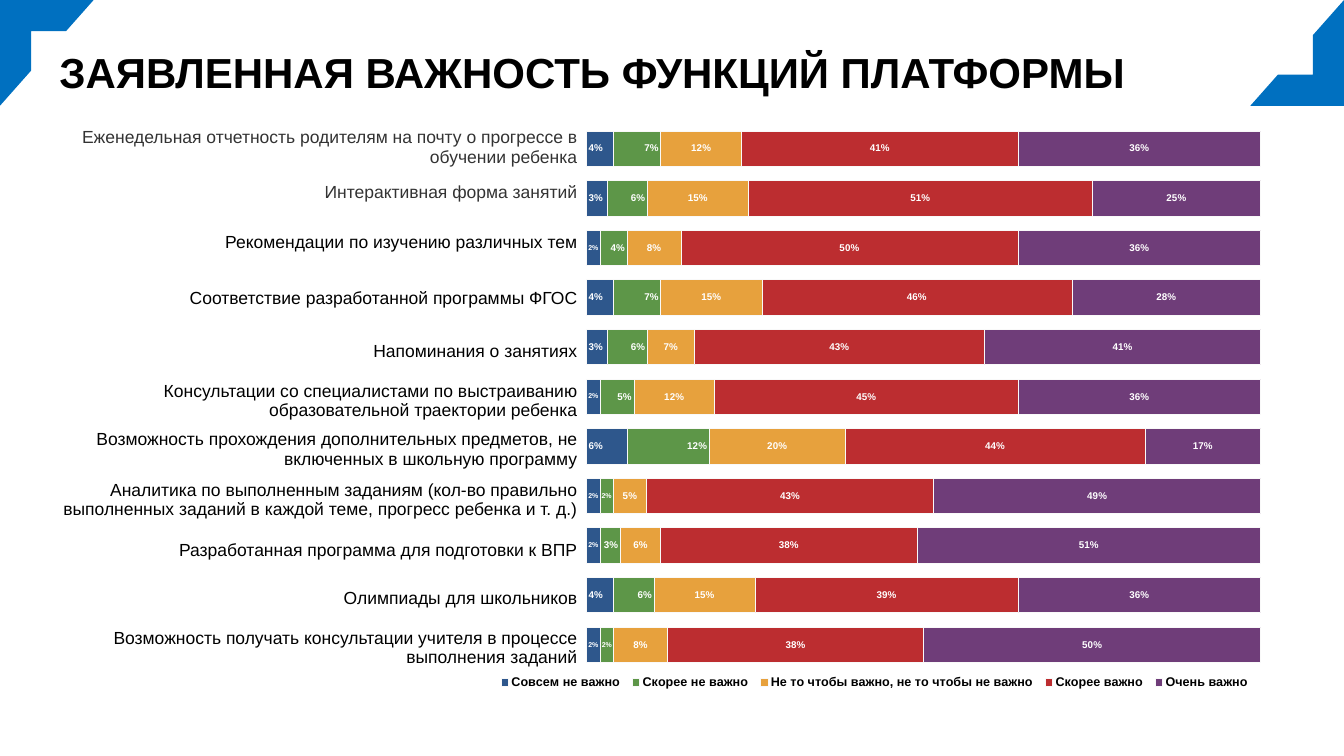
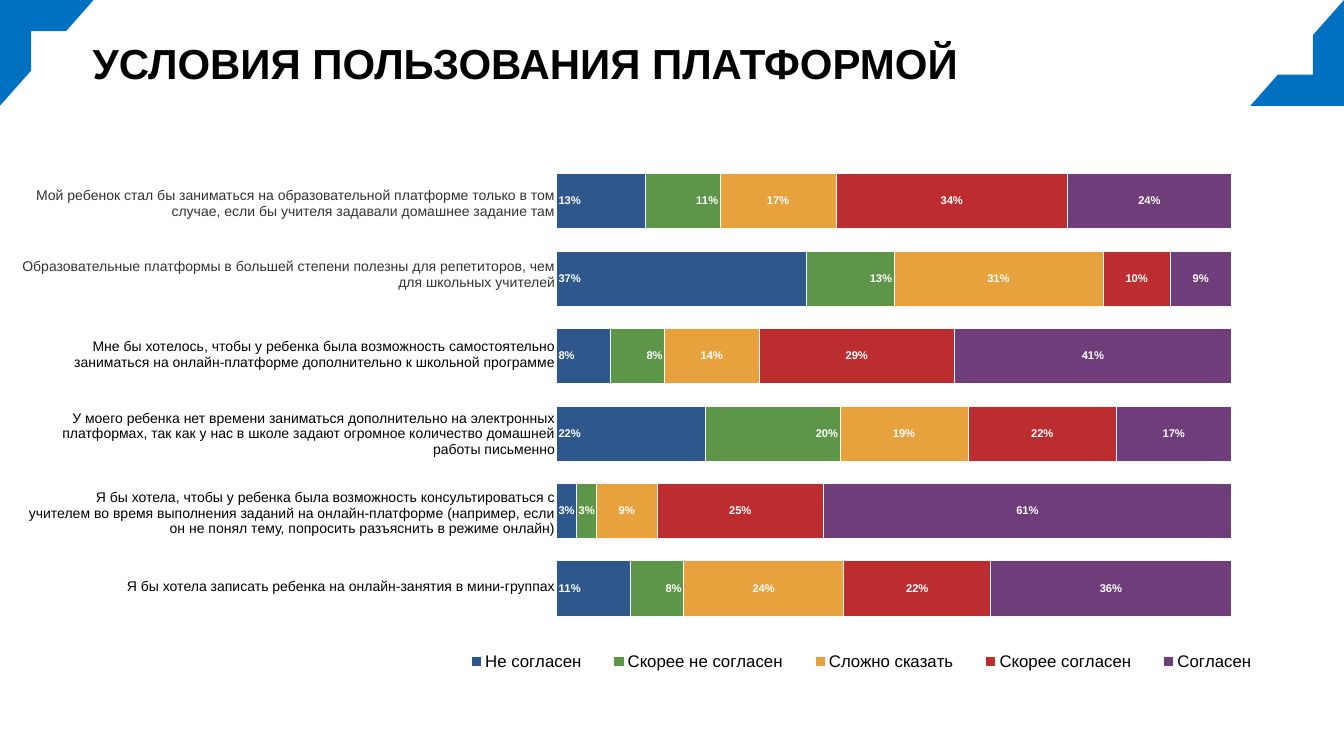
from dataclasses import dataclass

from lxml.etree import SubElement
from pptx import Presentation
from pptx.chart.data import CategoryChartData
from pptx.dml.color import RGBColor
from pptx.enum.chart import (XL_CHART_TYPE, XL_LABEL_POSITION, XL_LEGEND_POSITION,
                             XL_TICK_LABEL_POSITION, XL_TICK_MARK)
from pptx.enum.shapes import MSO_SHAPE
from pptx.enum.text import MSO_ANCHOR, PP_ALIGN
from pptx.oxml.ns import qn
from pptx.util import Cm, Pt


@dataclass(frozen=True)
class Theme:
    font: str = "Arial"
    accent: str = "0070C0"
    text: str = "000000"
    soft_text: str = "333333"
    light: str = "FFFFFF"
    bar_edge: str = "F9F9F9"
    answers: tuple = ("2E578C", "5D9648", "E7A13D", "BC2D30", "6F3D79")
    title_size: int = 60
    narrow_value_size: int = 10


THEME = Theme()
SLIDE_SIZE = (67.73, 38.1)
CORNER_SIZE = (4.72, 5.33)
TITLE_SIZE = (58.34, 6.35)
NARROW_SHARE = 0.02
LABEL_POSITIONS = (XL_LABEL_POSITION.INSIDE_BASE, XL_LABEL_POSITION.INSIDE_END,
                   *[XL_LABEL_POSITION.CENTER] * 3)

SURVEYS = [
    {
        "title": "ЗАЯВЛЕННАЯ ВАЖНОСТЬ ФУНКЦИЙ ПЛАТФОРМЫ",
        "title_at": (2.84, -0.58),
        "title_spacing": Pt(130),
        "table": (1.83, 6.4, 27.25),
        "chart": (21.92, 5.44, 48.67, 29.54),
        "plot": (0.157, 0.027, 0.698, 0.931),
        "legend": (0.06, 0.96, 0.79, 0.04),
        "legend_bold": True,
        "sizes": {"question": 25, "value": 14, "legend": 18},
        "answers": ["Совсем не важно", "Скорее не важно",
                    "Не то чтобы важно, не то чтобы не важно",
                    "Скорее важно", "Очень важно"],
        "questions": [
            ("Еженедельная отчетность родителям на почту о прогрессе в обучении ребенка",
             2.08, (0.04, 0.07, 0.12, 0.41, 0.36)),
            ("Интерактивная форма занятий", 2.44, (0.03, 0.06, 0.15, 0.51, 0.25)),
            ("Рекомендации по изучению различных тем",
             2.62, (0.02, 0.04, 0.08, 0.5, 0.36)),
            ("Соответствие разработанной программы ФГОС",
             2.97, (0.04, 0.07, 0.15, 0.46, 0.28)),
            ("Напоминания о занятиях", 2.44, (0.03, 0.06, 0.07, 0.43, 0.41)),
            ("Консультации со специалистами по выстраиванию образовательной "
             "траектории ребенка", 2.49, (0.02, 0.05, 0.12, 0.45, 0.36)),
            ("Возможность прохождения дополнительных предметов, не включенных "
             "в школьную программу", 2.44, (0.06, 0.12, 0.2, 0.44, 0.17)),
            ("Аналитика по выполненным заданиям (кол-во правильно выполненных заданий "
             "в каждой теме, прогресс ребенка и т. д.)",
             2.62, (0.02, 0.02, 0.05, 0.43, 0.49)),
            ("Разработанная программа для подготовки к ВПР",
             2.44, (0.02, 0.03, 0.06, 0.38, 0.51)),
            ("Олимпиады для школьников", 2.49, (0.04, 0.06, 0.15, 0.39, 0.36)),
            ("Возможность получать консультации учителя в процессе выполнения заданий",
             2.44, (0.02, 0.02, 0.08, 0.38, 0.5)),
        ],
    },
    {
        "title": "УСЛОВИЯ ПОЛЬЗОВАНИЯ ПЛАТФОРМОЙ",
        "title_at": (4.52, 0),
        "title_spacing": 1.0,
        "table": (0.94, 8.64, 27.03),
        "chart": (22.4, 7.16, 46.69, 26.87),
        "plot": (0.121, 0.038, 0.728, 0.872),
        "legend": (0, 0.95, 0.9, 0.05),
        "legend_bold": False,
        "sizes": {"question": 20, "value": 16, "legend": 24},
        "answers": ["Не согласен", "Скорее не согласен", "Сложно сказать",
                    "Скорее согласен", "Согласен"],
        "questions": [
            ("Мой ребенок стал бы заниматься на образовательной платформе только в том "
             "случае, если бы учителя задавали домашнее задание там",
             3.23, (0.13, 0.11, 0.17, 0.34, 0.24)),
            ("Образовательные платформы в большей степени полезны для репетиторов, "
             "чем для школьных учителей", 3.96, (0.37, 0.13, 0.31, 0.1, 0.09)),
            ("Мне бы хотелось, чтобы у ребенка была возможность самостоятельно "
             "заниматься на онлайн-платформе дополнительно к школьной программе",
             4.11, (0.08, 0.08, 0.14, 0.29, 0.41)),
            ("У моего ребенка нет времени заниматься дополнительно на электронных "
             "платформах, так как у нас в школе задают огромное количество домашней "
             "работы письменно", 3.84, (0.22, 0.2, 0.19, 0.22, 0.17)),
            ("Я бы хотела, чтобы у ребенка была возможность консультироваться с учителем "
             "во время выполнения заданий на онлайн-платформе (например, если он не понял "
             "тему, попросить разъяснить в режиме онлайн)",
             4.19, (0.03, 0.03, 0.09, 0.25, 0.61)),
            ("Я бы хотела записать ребенка на онлайн-занятия в мини-группах",
             3.15, (0.11, 0.08, 0.24, 0.22, 0.36)),
        ],
    },
]


def centimetres(values):
    """Turn plain numbers into lengths."""
    return [Cm(value) for value in values]


def style_font(font, size, color, bold=False):
    """Apply the theme font with a size, colour and weight."""
    font.name = THEME.font
    font.size = Pt(size)
    font.bold = bold
    font.color.rgb = RGBColor.from_string(color)


def add_corners(slide, layout):
    """Place the two corner frames on the layout behind its placeholders."""
    width, height = CORNER_SIZE
    for index, (left, rotation) in enumerate(((0, 0), (SLIDE_SIZE[0] - width, 180))):
        corner = slide.shapes.add_shape(MSO_SHAPE.HALF_FRAME,
                                        *centimetres((left, 0, width, height)))
        corner.rotation = rotation
        corner.shadow.inherit = False
        corner.fill.solid()
        corner.fill.fore_color.rgb = RGBColor.from_string(THEME.accent)
        corner.line.fill.background()
        corner._element.nvSpPr.cNvPr.set("id", str(101 + index))
        layout.shapes._spTree.insert(2 + index, corner._element)


def format_title(title, survey):
    """Fill and place the slide title."""
    title.left, title.top = centimetres(survey["title_at"])
    title.width, title.height = centimetres(TITLE_SIZE)
    frame = title.text_frame
    frame.text = survey["title"]
    frame.word_wrap = True
    frame.vertical_anchor = MSO_ANCHOR.MIDDLE
    frame.margin_left = frame.margin_right = Cm(0.15)
    frame.margin_top = frame.margin_bottom = Cm(0.15)
    paragraph = frame.paragraphs[0]
    paragraph.alignment = PP_ALIGN.LEFT
    paragraph.line_spacing = survey["title_spacing"]
    style_font(paragraph.runs[0].font, THEME.title_size, THEME.text, True)


def set_layout(parent, index, box, inner=False):
    """Fix the position of a chart part as fractions of the chart."""
    for old in parent.findall(qn("c:layout")):
        parent.remove(old)
    layout = parent.makeelement(qn("c:layout"))
    parent.insert(index, layout)
    manual = SubElement(layout, qn("c:manualLayout"))
    settings = [("layoutTarget", "inner")] if inner else []
    settings += [("xMode", "edge"), ("yMode", "edge"), *zip("xywh", box)]
    for name, value in settings:
        SubElement(manual, qn(f"c:{name}"), val=str(value))


def format_series(series, color, position, value_size):
    """Colour one answer and label its shares, smaller in narrow segments."""
    series.format.fill.solid()
    series.format.fill.fore_color.rgb = RGBColor.from_string(color)
    series.format.line.color.rgb = RGBColor.from_string(THEME.bar_edge)
    series.format.line.width = Pt(0.75)
    labels = series.data_labels
    labels.show_value = True
    labels.number_format = "#,##0%"
    labels.number_format_is_linked = False
    labels.position = position
    style_font(labels.font, value_size, THEME.light, True)
    for index, share in enumerate(series.values):
        if share <= NARROW_SHARE:
            label = series.points[index].data_label
            style_font(label.font, THEME.narrow_value_size, THEME.light, True)
            label.position = XL_LABEL_POSITION.CENTER


def add_answer_chart(slide, survey):
    """Draw bars of equal length split by answer shares."""
    questions, sizes = survey["questions"], survey["sizes"]
    chart_data = CategoryChartData(number_format="#,##0%")
    chart_data.categories = [str(number + 1) for number in range(len(questions))]
    shares = zip(*(values for _, _, values in questions))
    for answer, values in zip(survey["answers"], shares):
        chart_data.add_series(answer, values)
    chart = slide.shapes.add_chart(XL_CHART_TYPE.BAR_STACKED_100,
                                   *centimetres(survey["chart"]), chart_data).chart
    chart.has_title = False
    style_font(chart.font, sizes["value"], THEME.light, True)

    for axis in (chart.category_axis, chart.value_axis):
        axis.has_major_gridlines = False
        axis.major_tick_mark = axis.minor_tick_mark = XL_TICK_MARK.NONE
        axis.tick_label_position = XL_TICK_LABEL_POSITION.NONE
        axis.format.line.fill.background()
    chart.category_axis.reverse_order = True
    chart.value_axis.minimum_scale = 0
    chart.value_axis.maximum_scale = 1

    plot = chart.plots[0]
    plot.gap_width, plot.overlap = 40, 100
    plot.vary_by_categories = False
    for series, color, position in zip(plot.series, THEME.answers, LABEL_POSITIONS):
        format_series(series, color, position, sizes["value"])

    chart.has_legend = True
    chart.legend.position = XL_LEGEND_POSITION.BOTTOM
    chart.legend.include_in_layout = False
    style_font(chart.legend.font, sizes["legend"], THEME.text, survey["legend_bold"])
    set_layout(chart.legend._element, 1, survey["legend"])
    set_layout(chart._chartSpace.chart.plotArea, 0, survey["plot"], inner=True)


def add_question_table(slide, survey):
    """Set the questions in one right-aligned column beside the bars."""
    questions = survey["questions"]
    left, top, width = survey["table"]
    height = sum(row_height for _, row_height, _ in questions)
    table = slide.shapes.add_table(len(questions), 1,
                                   *centimetres((left, top, width, height))).table
    table.first_row = table.horz_banding = False
    for index, (question, row_height, _) in enumerate(questions):
        table.rows[index].height = Cm(row_height)
        cell = table.cell(index, 0)
        cell.fill.background()
        cell.vertical_anchor = MSO_ANCHOR.MIDDLE
        cell.margin_left = cell.margin_right = cell.margin_top = cell.margin_bottom = 0
        cell.text_frame.text = question
        paragraph = cell.text_frame.paragraphs[0]
        paragraph.alignment = PP_ALIGN.RIGHT
        color = THEME.soft_text
        if index >= 2:
            color = THEME.text
            paragraph._p.get_or_add_pPr().set("indent", str(Cm(0.64)))
        style_font(paragraph.runs[0].font, survey["sizes"]["question"], color)


def main():
    """Build the survey slides and save the presentation."""
    presentation = Presentation()
    presentation.slide_width, presentation.slide_height = centimetres(SLIDE_SIZE)
    layout = presentation.slide_layouts.get_by_name("Title Only")
    for index, survey in enumerate(SURVEYS):
        slide = presentation.slides.add_slide(layout)
        if index == 0:
            add_corners(slide, layout)
        format_title(slide.shapes.title, survey)
        add_answer_chart(slide, survey)
        add_question_table(slide, survey)
    presentation.save("out.pptx")


if __name__ == "__main__":
    main()
